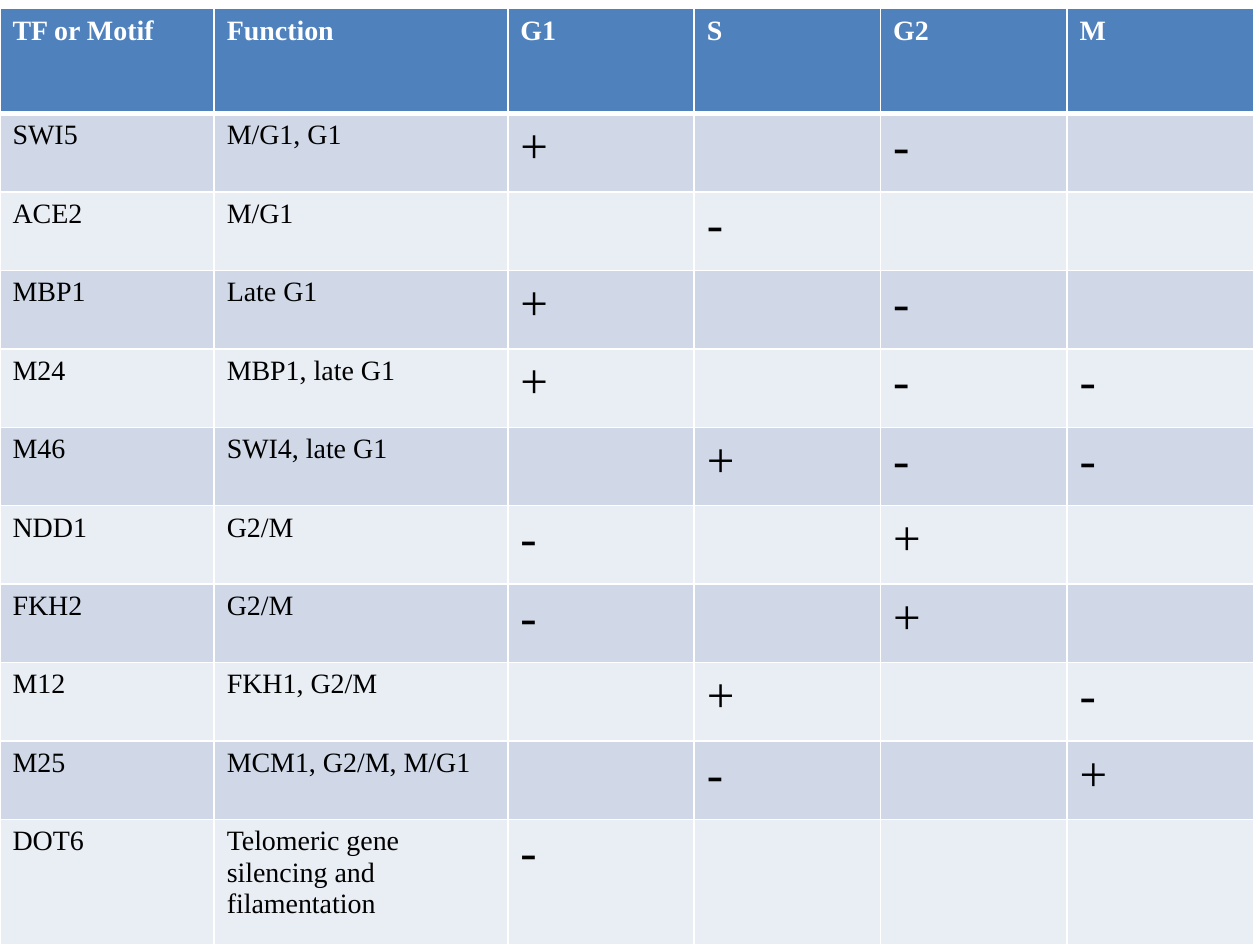
from lxml.etree import SubElement
from pptx import Presentation
from pptx.dml.color import RGBColor
from pptx.oxml.ns import qn
from pptx.util import Pt

FONT = "Times New Roman"
COLORS = {
    "header": "4F81BD",
    "band_dark": "D0D8E8",
    "band_light": "E9EDF4",
    "border": "FFFFFF",
    "header_text": "FFFFFF",
    "body_text": "000000",
}
TEXT_SIZE, SIGN_SIZE = 16, 28
THIN, THICK = 1, 3

COLUMN_WIDTHS = [122.4, 167.8] + [106.5] * 4
ROW_HEIGHTS = [59.8] + [44.85] * 9 + [71.3]

HEADER = ["TF or Motif", "Function", "G1", "S", "G2", "M"]
# Factor, function, then the sign in each cell cycle phase
FACTORS = [
    ["SWI5", "M/G1, G1", "+", "", "-", ""],
    ["ACE2", "M/G1", "", "-", "", ""],
    ["MBP1", "Late G1", "+", "", "-", ""],
    ["M24", "MBP1, late G1", "+", "", "-", "-"],
    ["M46", "SWI4, late G1", "", "+", "-", "-"],
    ["NDD1", "G2/M", "-", "", "+", ""],
    ["FKH2", "G2/M", "-", "", "+", ""],
    ["M12", "FKH1, G2/M", "", "+", "", "-"],
    ["M25", "MCM1, G2/M, M/G1", "", "-", "", "+"],
    ["DOT6", "Telomeric gene silencing and filamentation", "-", "", "", ""],
]


def set_borders(cell, top, bottom):
    """Draw the four cell borders; they must precede the fill in the XML."""
    properties = cell._tc.get_or_add_tcPr()
    widths = {"a:lnL": THIN, "a:lnR": THIN, "a:lnT": top, "a:lnB": bottom}
    for position, (tag, width) in enumerate(widths.items()):
        line = SubElement(properties, qn(tag), w=str(Pt(width)))
        fill = SubElement(line, qn("a:solidFill"))
        SubElement(fill, qn("a:srgbClr"), val=COLORS["border"])
        properties.insert(position, line)


def set_fill(cell, color):
    cell.fill.solid()
    cell.fill.fore_color.rgb = RGBColor.from_string(COLORS[color])


def set_text(cell, text, color, bold):
    if not text:
        return
    cell.text_frame.text = text
    font = cell.text_frame.paragraphs[0].runs[0].font
    font.name = FONT
    font.size = Pt(SIGN_SIZE if text in "+-" else TEXT_SIZE)
    font.bold = bold
    font.color.rgb = RGBColor.from_string(COLORS[color])


def add_factor_table(slide):
    rows = [HEADER] + FACTORS
    table = slide.shapes.add_table(
        len(rows), len(HEADER), Pt(0), Pt(5),
        Pt(sum(COLUMN_WIDTHS)), Pt(sum(ROW_HEIGHTS)),
    ).table
    for column, width in zip(table.columns, COLUMN_WIDTHS):
        column.width = Pt(width)
    for row, height in zip(table.rows, ROW_HEIGHTS):
        row.height = Pt(height)

    for row_index, texts in enumerate(rows):
        is_header = row_index == 0
        band = "band_dark" if row_index % 2 else "band_light"
        for column_index, text in enumerate(texts):
            cell = table.cell(row_index, column_index)
            set_text(cell, text, "header_text" if is_header else "body_text", is_header)
            set_fill(cell, "header" if is_header else band)
            # A thick rule separates the header from the body
            set_borders(
                cell,
                top=THICK if row_index == 1 else THIN,
                bottom=THICK if is_header else THIN,
            )


def main():
    presentation = Presentation()
    presentation.slide_width, presentation.slide_height = Pt(720), Pt(540)
    slide = presentation.slides.add_slide(presentation.slide_layouts[6])
    add_factor_table(slide)
    presentation.save("out.pptx")


if __name__ == "__main__":
    main()
